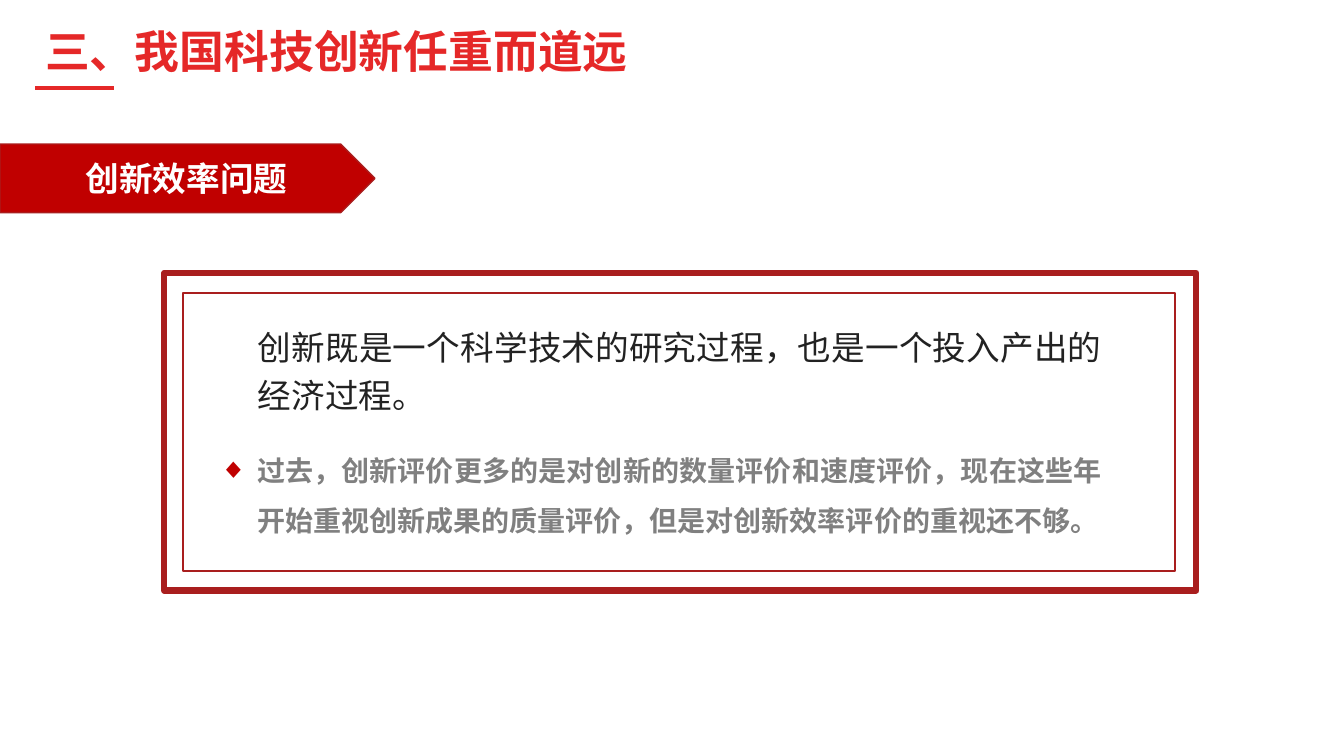
from dataclasses import dataclass, field

from lxml.etree import SubElement as Sub
from pptx import Presentation
from pptx.dml.color import RGBColor as Rgb
from pptx.enum.shapes import MSO_CONNECTOR as Link, MSO_SHAPE as Kind
from pptx.enum.text import MSO_AUTO_SIZE as Fit, PP_ALIGN as Align
from pptx.oxml.ns import qn
from pptx.slide import Slide
from pptx.util import Cm, Pt

HUES = {
    "title": "E52828",
    "banner": "C00000",
    "frame": "A91E1E",
    "white": "FFFFFF",
    "dark": "222222",
    "grey": "808080",
}
FACE = "Arial"
Box = tuple[float, float, float, float]


@dataclass
class Panel:
    kind: Kind
    box: Box
    width: float
    fill: str = ""


@dataclass
class Label:
    text: str
    box: Box
    size: int
    hue: str
    bold: bool = True
    wrap: bool = False
    bullet: str = ""
    form: dict = field(default_factory=dict)


BANNER = Panel(Kind.PENTAGON, (0, 3.63, 9.45, 1.73), 1, "banner")
FRAMES = [
    Panel(Kind.RECTANGLE, (4.14, 6.88, 26.01, 8.0), 4.5),
    Panel(Kind.RECTANGLE, (4.62, 7.39, 24.99, 7.01), 1.5),
]
LABELS = [
    Label("三、我国科技创新任重而道远", (0.89, 0.48, 15.34, 1.63), 32, "title"),
    Label("创新效率问题", (1.91, 3.86, 5.64, 1.27), 24, "white"),
    Label("创新既是一个科学技术的研究过程，也是一个投入产出的经济过程。",
          (6.25, 7.9, 21.77, 2.72), 24, "dark", bold=False, wrap=True,
          form={"alignment": Align.JUSTIFY, "line_spacing": 1.2}),
    Label("过去，创新评价更多的是对创新的数量评价和速度评价，现在这些年"
          "开始重视创新成果的质量评价，但是对创新效率评价的重视还不够。",
          (5.28, 10.87, 22.74, 2.82), 20, "grey", wrap=True, bullet="◆",
          form={"alignment": Align.JUSTIFY, "line_spacing": 1.5}),
]


def tint(name: str) -> Rgb:
    return Rgb.from_string(HUES[name])


def add_panel(slide: Slide, panel: Panel) -> None:
    shape = slide.shapes.add_shape(panel.kind, *map(Cm, panel.box))
    shape.shadow.inherit = False
    if panel.fill:
        shape.fill.solid()
        shape.fill.fore_color.rgb = tint(panel.fill)
    else:
        shape.fill.background()
    shape.line.color.rgb = tint("frame")
    shape.line.width = Pt(panel.width)


def add_rule(slide: Slide) -> None:
    """Draw the short line under the title."""
    rule = slide.shapes.add_connector(
        Link.STRAIGHT, Cm(0.89), Cm(2.21), Cm(2.87), Cm(2.21))
    rule.line.color.rgb = tint("title")
    rule.line.width = Pt(3)
    Sub(rule._element.spPr, qn("a:effectLst"))


def add_mark(para, mark: str) -> None:
    """Give the paragraph a hanging bullet."""
    props = para._p.get_or_add_pPr()
    props.set("marL", str(Cm(0.95)))
    props.set("indent", str(-Cm(0.95)))
    Sub(Sub(props, qn("a:buClr")), qn("a:srgbClr"), val=HUES["banner"])
    Sub(props, qn("a:buFont"), typeface=FACE)
    Sub(props, qn("a:buChar"), char=mark)


def add_label(slide: Slide, label: Label) -> None:
    frame = slide.shapes.add_textbox(*map(Cm, label.box)).text_frame
    frame.word_wrap = label.wrap
    frame.auto_size = Fit.SHAPE_TO_FIT_TEXT
    para = frame.paragraphs[0]
    if label.bullet:
        add_mark(para, label.bullet)
    for name, value in label.form.items():
        setattr(para, name, value)
    run = para.add_run()
    run.text = label.text
    style = {"name": FACE, "size": Pt(label.size), "bold": label.bold}
    for name, value in style.items():
        setattr(run.font, name, value)
    run.font.color.rgb = tint(label.hue)
    Sub(run._r.get_or_add_rPr(), qn("a:ea"), typeface=FACE)


def main() -> None:
    deck = Presentation()
    deck.slide_width, deck.slide_height = Cm(33.87), Cm(19.05)
    slide = deck.slides.add_slide(deck.slide_layouts[6])
    add_panel(slide, BANNER)
    add_rule(slide)
    for label in LABELS:
        add_label(slide, label)
    for panel in FRAMES:
        add_panel(slide, panel)
    deck.save("out.pptx")


if __name__ == "__main__":
    main()
